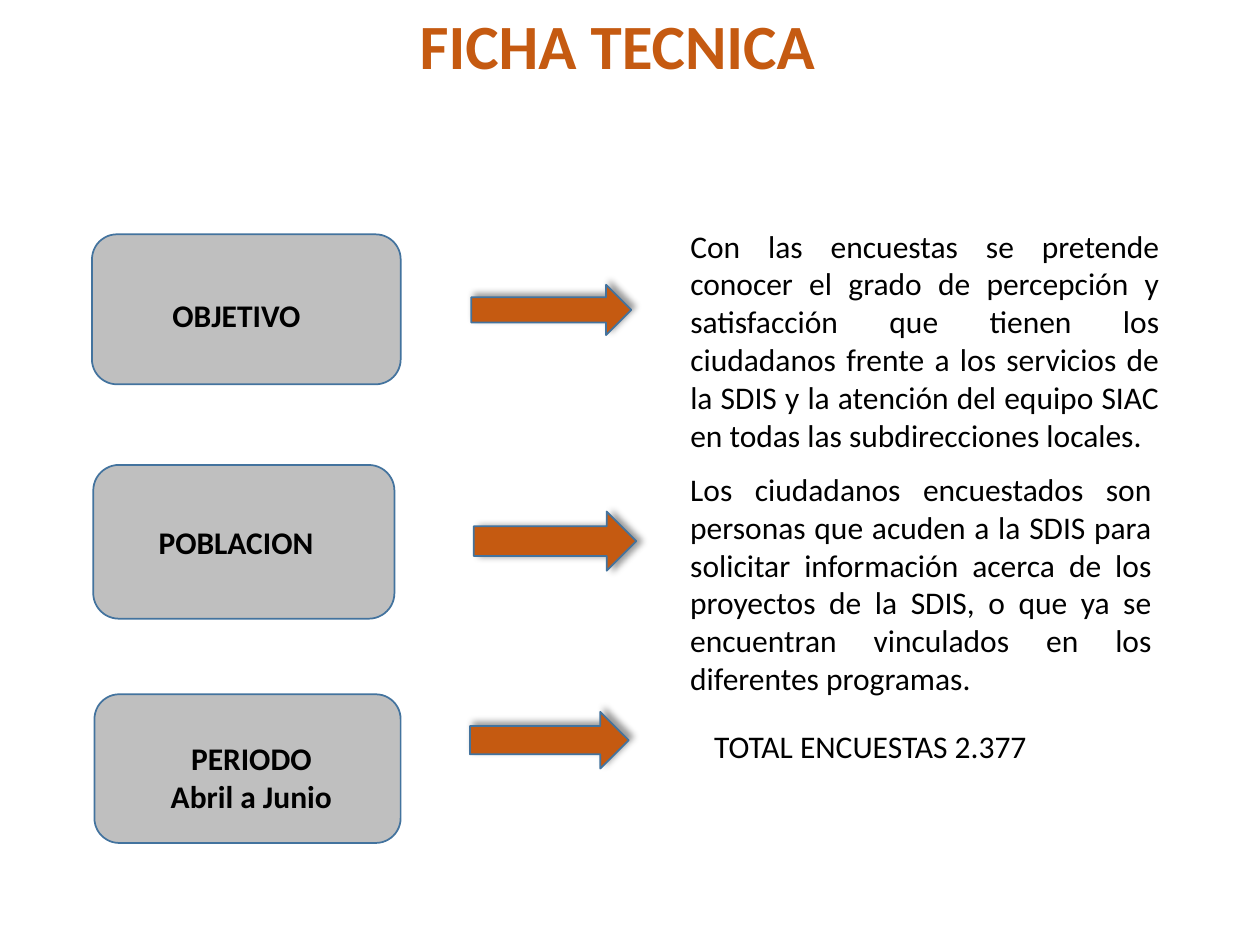
from dataclasses import dataclass

from lxml import etree
from pptx import Presentation
from pptx import util as u
from pptx.dml.color import RGBColor
from pptx.enum import shapes, text
from pptx.oxml import ns

WIDE, HIGH = u.Inches(10), u.Inches(7.5)


@dataclass(frozen=True)
class Theme:
    font: str = "Calibri"
    ink: str = "000000"
    accent: str = "C55A11"
    panel: str = "BFBFBF"
    edge: str = "43739E"
    head: int = 36
    body: int = 18


THEME = Theme()
KIND = shapes.MSO_SHAPE
ALIGN = text.PP_ALIGN
ANCHOR = text.MSO_ANCHOR

# Each row: panel, label box, label lines, label alignment, arrow, shadow
# angle, note box, note, note alignment; boxes are percentages of the slide
ROWS = [
    ((7.3, 24.8, 24.5, 15.87), (12.7, 30.67, 15.3, 9.47), ["OBJETIVO"],
     ALIGN.LEFT, (37.4, 30.13, 12.7, 5.33), 315, (53.8, 23.33, 39.2, 31.6),
     "Con las encuestas se pretende conocer el grado de percepción y "
     "satisfacción que tienen los ciudadanos frente a los servicios de la "
     "SDIS y la atención del equipo SIAC en todas las subdirecciones "
     "locales.", ALIGN.JUSTIFY),
    ((7.4, 49.2, 23.9, 16.27), (11.6, 54.67, 18.2, 9.33), ["POBLACION"],
     ALIGN.LEFT, (37.6, 54.13, 12.9, 6.27), 0, (53.8, 49.07, 38.6, 25.6),
     "Los ciudadanos encuestados son personas que acuden a la SDIS para "
     "solicitar información acerca de los proyectos de la SDIS, o que ya se "
     "encuentran vinculados en los diferentes programas.", ALIGN.JUSTIFY),
    ((7.5, 73.47, 24.3, 15.73), (8.2, 77.6, 23.5, 9.47),
     ["PERIODO", "Abril a Junio"],
     ALIGN.CENTER, (37.3, 75.33, 12.6, 6), 315, (55.7, 76.27, 36, 11.47),
     "TOTAL ENCUESTAS 2.377", ALIGN.LEFT),
]


def place(box):
    """Turn percentages of the slide into lengths."""
    return [round(side * part / 100)
            for side, part in zip((WIDE, HIGH, WIDE, HIGH), box)]


def write(shape, lines, size=THEME.body, color=THEME.ink, bold=False,
          align=ALIGN.LEFT, anchor=ANCHOR.TOP, gap=1.0):
    """Fill a shape with formatted paragraphs."""
    frame = shape.text_frame
    frame.text = "\n".join(lines)
    frame.word_wrap = True
    frame.auto_size = text.MSO_AUTO_SIZE.NONE
    frame.vertical_anchor = anchor
    for para in frame.paragraphs:
        para.alignment, para.line_spacing = align, gap
        font = para.font
        font.name, font.size, font.bold = THEME.font, u.Pt(size), bold
        font.color.rgb = RGBColor.from_string(color)


def title(slide, words):
    shape = slide.shapes.title
    shape.left, shape.top, shape.width, shape.height = place(
        (11.9, 0, 74.2, 10.3))
    write(shape, [words], size=THEME.head, color=THEME.accent, bold=True,
          align=ALIGN.CENTER, anchor=ANCHOR.MIDDLE, gap=0.9)


def block(slide, kind, box, fill):
    """Draw an outlined preset shape."""
    shape = slide.shapes.add_shape(kind, *place(box))
    shape.shadow.inherit = False
    shape.fill.solid()
    shape.fill.fore_color.rgb = RGBColor.from_string(fill)
    shape.line.color.rgb = RGBColor.from_string(THEME.edge)
    shape.line.width = u.Pt(1)
    return shape


def arrow(slide, box, angle):
    """Draw a right arrow with a soft shadow."""
    shape = block(slide, KIND.RIGHT_ARROW, box, THEME.accent)
    effects = shape._element.spPr.find(ns.qn("a:effectLst"))
    outer = etree.SubElement(effects, ns.qn("a:outerShdw"),
                             blurRad=str(u.Pt(4)), dist=str(u.Pt(3)),
                             dir=str(angle * 60000), rotWithShape="0")
    tint = etree.SubElement(outer, ns.qn("a:srgbClr"), val=THEME.ink)
    etree.SubElement(tint, ns.qn("a:alpha"), val="40000")


def note(slide, box, lines, **style):
    write(slide.shapes.add_textbox(*place(box)), lines, **style)


def main():
    deck = Presentation()
    deck.slide_width, deck.slide_height = WIDE, HIGH
    slide = deck.slides.add_slide(deck.slide_layouts[5])
    title(slide, "FICHA TECNICA")

    # One row per topic: panel with label, arrow, explanation
    for panel, spot, label, side, dart, angle, area, words, align in ROWS:
        block(slide, KIND.ROUNDED_RECTANGLE, panel, THEME.panel)
        note(slide, spot, label, bold=True, align=side)
        arrow(slide, dart, angle)
        note(slide, area, [words], align=align)

    deck.save("out.pptx")


if __name__ == "__main__":
    main()
